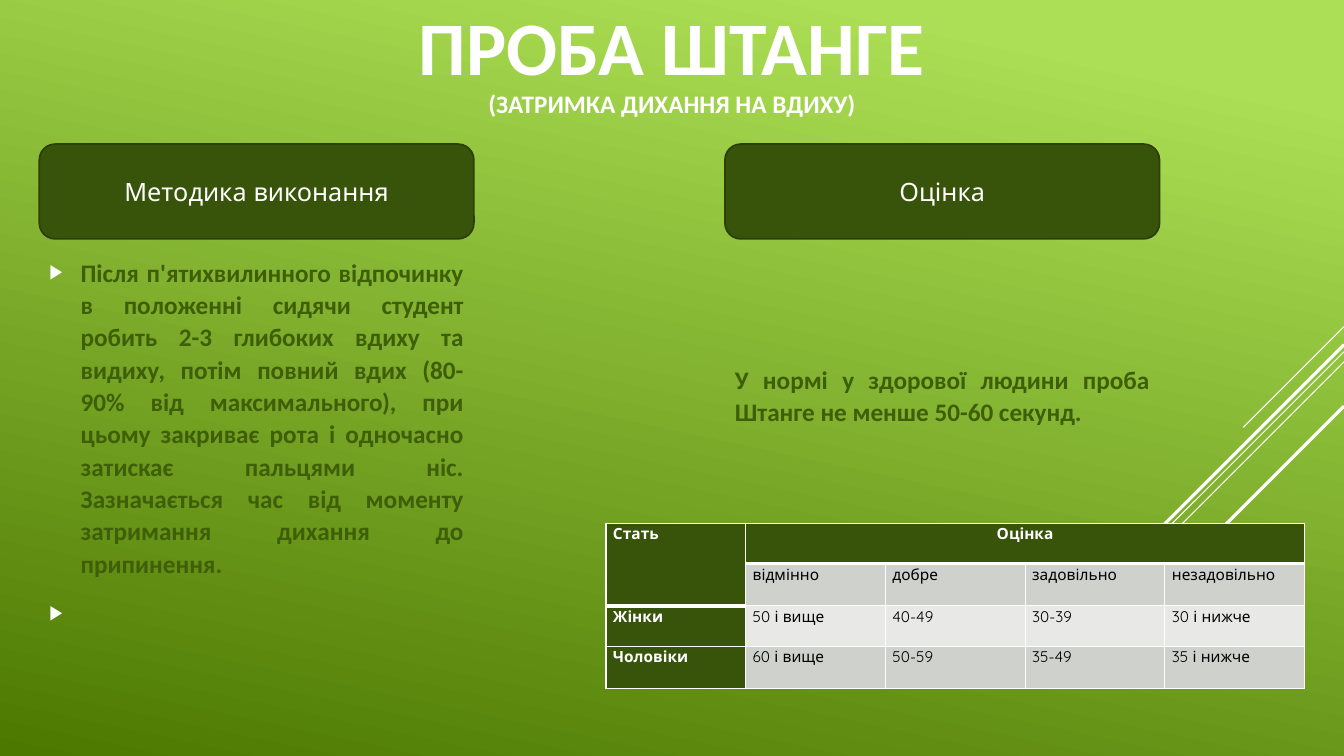
from dataclasses import dataclass

from lxml.etree import SubElement
from pptx import Presentation
from pptx.dml.color import RGBColor
from pptx.enum.shapes import MSO_CONNECTOR as Connector, MSO_SHAPE as Preset
from pptx.enum.text import MSO_ANCHOR as Anchor, MSO_AUTO_SIZE as AutoSize, PP_ALIGN as Align
from pptx.oxml.ns import qn
from pptx.util import Inches, Pt


@dataclass(frozen=True)
class Theme:
    light: str = "ACDF55"
    deep: str = "4C7800"
    panel: str = "38540A"
    outline: str = "2E3E07"
    body: str = "3E5E08"
    white: str = "FFFFFF"
    black: str = "000000"
    bands: tuple[str, ...] = ("CED1CC", "E8E9E7")
    text_font: str = "Calibri"
    label_font: str = "Quicksand"
    title_size: int = 54
    text_size: int = 18
    table_size: int = 11


@dataclass(frozen=True)
class Box:
    left: float
    top: float
    width: float
    height: float

    def lengths(self) -> tuple:
        return tuple(Inches(value) for value in (self.left, self.top, self.width, self.height))


@dataclass(frozen=True)
class Ray:
    top: float
    run: float
    weight: float


@dataclass(frozen=True)
class Heading:
    text: str
    left: float


THEME = Theme()
SLIDE_WIDTH, SLIDE_HEIGHT = 13.33, 7.5
COLUMN_WIDTH = 4.31
LEFT_COLUMN, RIGHT_COLUMN = 0.39, 7.19
RAYS = [
    Ray(3.24, 1, 0.75),
    Ray(3.49, 3.26, 0.75),
    Ray(3.59, 2.07, 0.75),
    Ray(3.42, 1.91, 2.25),
    Ray(4.03, 1.39, 2.25),
]
HEADINGS = [Heading("Методика виконання", LEFT_COLUMN), Heading("Оцінка", RIGHT_COLUMN)]
METHOD = (
    "Після п'ятихвилинного відпочинку в положенні сидячи студент робить 2-3 глибоких вдиху "
    "та видиху, потім повний вдих (80-90% від максимального), при цьому закриває рота і "
    "одночасно затискає пальцями ніс. Зазначається час від моменту затримання дихання до "
    "припинення."
)
NORM = "У нормі у здорової людини проба Штанге не менше 50-60 секунд."
GRADES = [
    ["Стать", "Оцінка", "", "", ""],
    ["", "відмінно", "добре", "задовільно", "незадовільно"],
    ["Жінки", "50 і вище", "40-49", "30-39", "30 і нижче"],
    ["Чоловіки", "60 і вище", "50-59", "35-49", "35 і нижче"],
]
ROW_HEIGHTS = [0.4, 0.42, 0.4, 0.42]


def color(value: str) -> RGBColor:
    return RGBColor.from_string(value)


def style_run(run, font: str, size: int, value: str, bold: bool = False) -> None:
    run.font.name = font
    run.font.size = Pt(size)
    run.font.bold = bold
    run.font.color.rgb = color(value)


def place(shape, box: Box) -> None:
    shape.left, shape.top, shape.width, shape.height = box.lengths()


def paint_background(slide) -> None:
    fill = slide.background.fill
    fill.gradient()
    fill.gradient_angle = 258
    for stop, position, value in zip(fill.gradient_stops, (0.1, 1), (THEME.light, THEME.deep)):
        stop.position = position
        stop.color.rgb = color(value)


def draw_ray(slide, ray: Ray) -> None:
    connector = slide.shapes.add_connector(
        Connector.STRAIGHT, Inches(SLIDE_WIDTH), Inches(ray.top),
        Inches(SLIDE_WIDTH - ray.run), Inches(ray.top + ray.run))
    connector.line.color.rgb = color(THEME.white)
    connector.line.width = Pt(ray.weight)
    SubElement(connector._element.spPr, qn("a:effectLst"))


def fill_title(shape) -> None:
    place(shape, Box(2, 0.04, 9.33, 1.2))
    frame = shape.text_frame
    frame.text = "ПРОБА ШТАНГЕ\v(ЗАТРИМКА ДИХАННЯ НА ВДИХУ)"
    frame.auto_size = AutoSize.NONE
    frame.vertical_anchor = Anchor.MIDDLE
    paragraph = frame.paragraphs[0]
    paragraph.alignment = Align.CENTER
    paragraph.line_spacing = 0.9
    for run, size in zip(paragraph.runs, (THEME.title_size, THEME.text_size)):
        style_run(run, THEME.text_font, size, THEME.white, True)


def add_bullet(paragraph) -> None:
    properties = paragraph._p.get_or_add_pPr()
    properties.set("marL", str(Inches(0.31)))
    properties.set("indent", str(Inches(-0.31)))
    bullet_color = SubElement(properties, qn("a:buClr"))
    SubElement(bullet_color, qn("a:srgbClr"), val=THEME.white)
    SubElement(properties, qn("a:buSzPct"), val="80000")
    SubElement(properties, qn("a:buFont"), typeface="Arial")
    SubElement(properties, qn("a:buChar"), char="▶")


def fill_text(shape, text: str, box: Box, bottom_inset: float, bulleted: bool) -> None:
    place(shape, box)
    frame = shape.text_frame
    frame.text = text
    frame.word_wrap = True
    frame.auto_size = AutoSize.NONE
    frame.vertical_anchor = Anchor.MIDDLE
    frame.margin_bottom = Inches(bottom_inset)
    for paragraph in frame.paragraphs:
        paragraph.alignment = Align.JUSTIFY
        paragraph.line_spacing = 1.07
        paragraph.space_before = Pt(4)
        paragraph.space_after = Pt(8)
        if bulleted:
            add_bullet(paragraph)
        for run in paragraph.runs:
            style_run(run, THEME.text_font, THEME.text_size, THEME.body, True)


def draw_heading(slide, heading: Heading) -> None:
    box = Box(heading.left, 1.43, COLUMN_WIDTH, 0.94)
    shape = slide.shapes.add_shape(Preset.ROUNDED_RECTANGLE, *box.lengths())
    shape.shadow.inherit = False
    shape.fill.solid()
    shape.fill.fore_color.rgb = color(THEME.panel)
    shape.line.color.rgb = color(THEME.outline)
    shape.line.width = Pt(1.25)
    shape.text_frame.text = heading.text
    shape.text_frame.vertical_anchor = Anchor.MIDDLE
    paragraph = shape.text_frame.paragraphs[0]
    paragraph.alignment = Align.CENTER
    style_run(paragraph.runs[0], THEME.label_font, THEME.text_size, THEME.white)


def style_cell(cell, text: str, row: int, column: int) -> None:
    header = row == 0 or column == 0
    properties = cell._tc.get_or_add_tcPr()
    for side in ("lnL", "lnR", "lnT", "lnB"):
        thick = (side == "lnB" and (row == 0 or (row, column) == (1, 0)))
        border = SubElement(properties, qn(f"a:{side}"), w=str(Pt(3 if thick else 1)))
        border_fill = SubElement(border, qn("a:solidFill"))
        SubElement(border_fill, qn("a:srgbClr"), val=THEME.white)
    cell.fill.solid()
    cell.fill.fore_color.rgb = color(THEME.panel if header else THEME.bands[(row + 1) % 2])
    cell.margin_left = cell.margin_right = Inches(0.07)
    cell.margin_top = cell.margin_bottom = 0
    cell.text_frame.text = text
    paragraph = cell.text_frame.paragraphs[0]
    paragraph.line_spacing = 1.07
    paragraph.space_after = Pt(8)
    paragraph.alignment = Align.CENTER if row == 0 and column else Align.LEFT
    paragraph.font.size = Pt(THEME.table_size)
    for run in paragraph.runs:
        style_run(run, THEME.label_font, THEME.table_size,
                  THEME.white if header else THEME.black, header)


def draw_grades(slide) -> None:
    box = Box(6.01, 5.19, 6.93, sum(ROW_HEIGHTS))
    table = slide.shapes.add_table(len(GRADES), len(GRADES[0]), *box.lengths()).table
    for row, height in zip(table.rows, ROW_HEIGHTS):
        row.height = Inches(height)
    for row, texts in enumerate(GRADES):
        for column, text in enumerate(texts):
            style_cell(table.cell(row, column), text, row, column)
    table.cell(0, 0).merge(table.cell(1, 0))
    table.cell(0, 1).merge(table.cell(0, 4))


def main() -> None:
    presentation = Presentation()
    presentation.slide_width = Inches(SLIDE_WIDTH)
    presentation.slide_height = Inches(SLIDE_HEIGHT)
    slide = presentation.slides.add_slide(presentation.slide_layouts[1])
    paint_background(slide)
    for ray in RAYS:
        draw_ray(slide, ray)
    fill_title(slide.shapes.title)
    method_box = Box(LEFT_COLUMN, 2.61, COLUMN_WIDTH, 3.95)
    fill_text(slide.placeholders[1], f"{METHOD}\n ", method_box, 0.47, True)
    for heading in HEADINGS:
        draw_heading(slide, heading)
    norm_box = Box(RIGHT_COLUMN, 2.34, COLUMN_WIDTH, 3.95)
    fill_text(slide.shapes.add_textbox(*norm_box.lengths()), NORM, norm_box, 0.85, False)
    draw_grades(slide)
    presentation.save("out.pptx")


if __name__ == "__main__":
    main()
